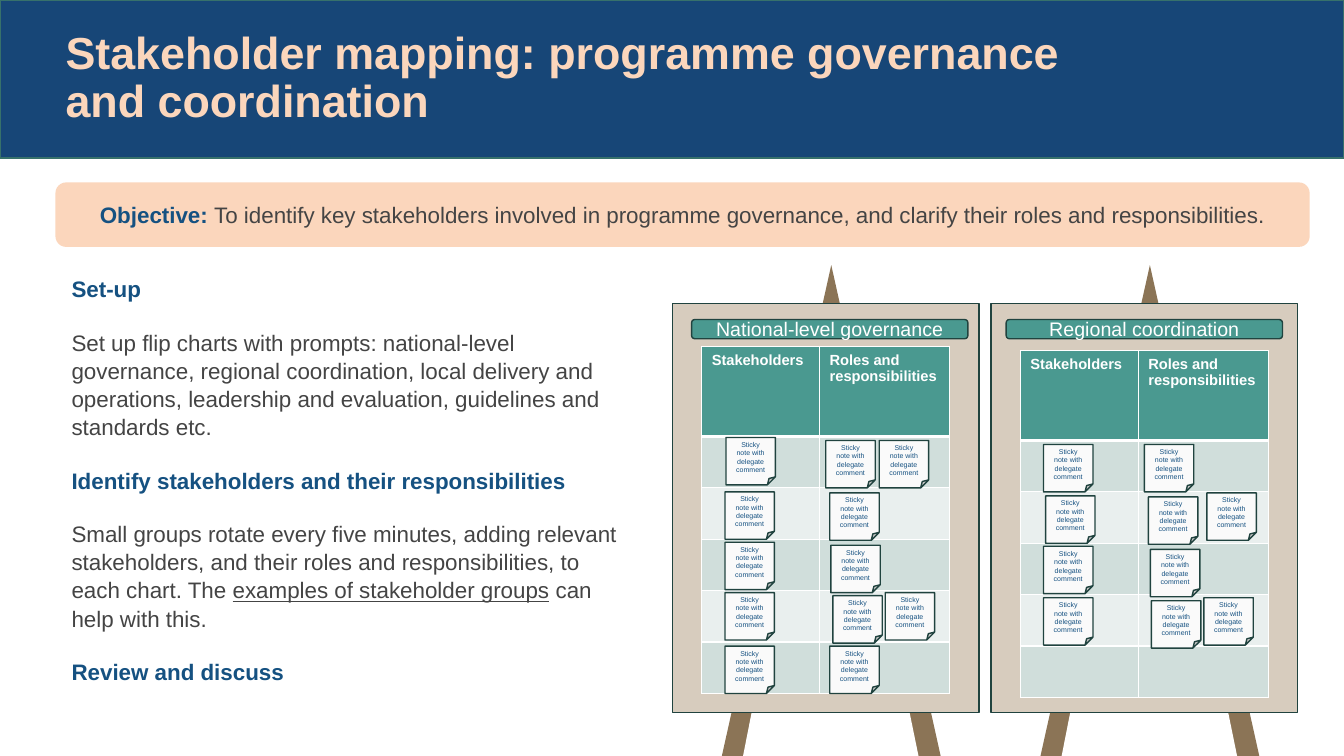
import pptx
import pptx.util
import pptx.dml.color
import pptx.enum.shapes
import pptx.enum.text
import pptx.oxml
import pptx.oxml.ns

# Content
TITLE = "Stakeholder mapping: programme governance and coordination"
OBJECTIVE = [("Objective: ", "heading"),
             ("To identify key stakeholders involved in programme governance, "
              "and clarify their roles and responsibilities.", "body")]
STEPS = [
    [("Set-up", "heading")],
    [("Set up flip charts with prompts: national-level governance, regional "
      "coordination, local delivery and operations, leadership and evaluation, "
      "guidelines and standards etc.", "body")],
    [("Identify stakeholders and their responsibilities", "heading")],
    [("Small groups rotate every five minutes, adding relevant stakeholders, and "
      "their roles and responsibilities, to each chart. The ", "body"),
     ("examples of stakeholder groups", "underlined"),
     (" can help with this.", "body")],
    [("Review and discuss", "heading")],
]
HEADERS = ["Stakeholders", "Roles and responsibilities"]
NOTE = "Sticky note with delegate comment"
FLIP_CHARTS = [
    {"name": "National-level governance", "left": 667, "label": 686, "table_top": 344,
     "notes": [(720, 434), (819, 437), (823, 489), (719, 488), (872, 437),
               (719, 538), (719, 588), (719, 641), (823, 641), (824, 541),
               (878, 588), (826, 591)]},
    {"name": "Regional coordination", "left": 983, "label": 998, "table_top": 348,
     "notes": [(1035, 441), (1135, 441), (1139, 493), (1035, 542), (1035, 593),
               (1141, 545), (1194, 593), (1142, 596), (1037, 492), (1197, 489)]},
]
COLUMNS = [117, 129]
ROWS = [89] + [51] * 5

# Formats
NAVY, PEACH, TEAL, WHITE, DARK = "174677", "FBD6BC", "4A9990", "FFFFFF", "20433F"
BANDS = ["D0DEDB", "E9EFEE"]
FORMATS = {
    "title": {"size": 32, "bold": True, "color": PEACH},
    "heading": {"size": 16, "bold": True, "color": "155181"},
    "body": {"size": 16, "bold": False, "color": "444444"},
    "underlined": {"size": 16, "bold": False, "underline": True, "color": "444444"},
    "label": {"size": 14, "bold": False, "color": WHITE},
    "header": {"size": 10.5, "bold": True, "color": WHITE},
    "note": {"size": 5, "bold": False, "color": "155181"},
}
PX = 9144  # 100 px to the inch
SHAPE = pptx.enum.shapes.MSO_SHAPE
ALIGN = pptx.enum.text.PP_ALIGN
MIDDLE = pptx.enum.text.MSO_ANCHOR.MIDDLE


def px(*lengths):
    return [pptx.util.Emu(n * PX) for n in lengths]


def rgb(value):
    return pptx.dml.color.RGBColor.from_string(value)


def write(tf, paragraphs, align=ALIGN.LEFT, **spacing):
    """Fill a text frame with paragraphs of (text, format name) runs."""
    tf.word_wrap = True
    for i, runs in enumerate(paragraphs):
        p = tf.add_paragraph() if i else tf.paragraphs[0]
        p.alignment = align
        for key, value in spacing.items():
            setattr(p, key, value)
        if i == 0:
            p.space_before = pptx.util.Pt(0)
        for text, name in runs:
            r = p.add_run()
            r.text = text
            r.font.name = "Arial"
            for key, value in FORMATS[name].items():
                if key == "color":
                    r.font.color.rgb = rgb(value)
                else:
                    setattr(r.font, key, pptx.util.Pt(value) if key == "size" else value)


def set_insets(tf, side, top=0):
    for name, inset in zip(("left", "right", "top", "bottom"), (side, side, top, top)):
        setattr(tf, f"margin_{name}", px(inset)[0])


def add_shape(shapes, kind, box, fill, line=None, runs=None, side=10):
    sp = shapes.add_shape(kind, *px(*box))
    sp.shadow.inherit = False
    sp.fill.solid()
    sp.fill.fore_color.rgb = rgb(fill)
    if line:
        sp.line.color.rgb = rgb(line)
        sp.line.width = pptx.util.Pt(1)
    else:
        sp.line.fill.background()
    if runs:
        set_insets(sp.text_frame, side)
        sp.text_frame.vertical_anchor = MIDDLE
        write(sp.text_frame, [runs], ALIGN.CENTER)
    return sp


def set_borders(cell, widths):
    """White cell borders; widths in points for left, right, top, bottom."""
    tc_pr = cell._tc.get_or_add_tcPr()
    for i, (side, width) in enumerate(zip("LRTB", widths)):
        tc_pr.insert(i, pptx.oxml.parse_xml(
            f'<a:ln{side} {pptx.oxml.ns.nsdecls("a")} w="{width * 12700}"><a:solidFill>'
            f'<a:srgbClr val="{WHITE}"/></a:solidFill></a:ln{side}>'))


def add_roles_table(shapes, left, top):
    frame = shapes.add_table(len(ROWS), len(COLUMNS),
                             *px(left, top, sum(COLUMNS), sum(ROWS)))
    table = frame.table
    for column, width in zip(table.columns, COLUMNS):
        column.width = px(width)[0]
    for i, (row, height) in enumerate(zip(table.rows, ROWS)):
        row.height = px(height)[0]
        for cell, header in zip(row.cells, HEADERS):
            cell.fill.solid()
            cell.fill.fore_color.rgb = rgb(BANDS[(i - 1) % 2] if i else TEAL)
            set_borders(cell, (1, 1, 3 if i == 1 else 1, 1 if i else 3))
            if i == 0:
                write(cell.text_frame, [[(header, "header")]])


def add_flip_chart(shapes, name, left, label, table_top, notes):
    # Easel: legs, gap between them, board
    easel = shapes.add_group_shape().shapes
    add_shape(easel, SHAPE.ISOSCELES_TRIANGLE, (left + 49, 263, 217, 487), "8B7456")
    gap = add_shape(easel, SHAPE.ISOSCELES_TRIANGLE, (left + 70, 317, 174, 433), WHITE)
    gap.adjustments[0] = 0.49
    add_shape(easel, SHAPE.RECTANGLE, (left, 301, 304, 406), "D7CCBE", DARK)
    # Label, table and sticky notes
    add_shape(shapes, SHAPE.ROUNDED_RECTANGLE, (label, 317, 274, 19), TEAL, DARK,
              [(name, "label")], 0)
    add_roles_table(shapes, left + 29, table_top)
    for x, y in notes:
        add_shape(shapes, SHAPE.FOLDED_CORNER, (x, y, 49, 47), "FAFAFA", DARK,
                  [(NOTE, "note")], 9)


def place(sp, box):
    sp.left, sp.top, sp.width, sp.height = px(*box)
    sp.text_frame.auto_size = pptx.enum.text.MSO_AUTO_SIZE.NONE
    set_insets(sp.text_frame, 10, 5)


def main():
    prs = pptx.Presentation()
    prs.slide_width, prs.slide_height = pptx.util.Inches(13.33), pptx.util.Inches(7.5)
    slide = prs.slides.add_slide(prs.slide_layouts[1])
    shapes = slide.shapes

    # Title on its band
    band = add_shape(shapes, SHAPE.RECTANGLE, (0, 0, 1333, 157), NAVY, "37716B")
    shapes._spTree.insert(2, band._element)
    place(shapes.title, (55, 0, 1016, 157))
    shapes.title.text_frame.vertical_anchor = MIDDLE
    write(shapes.title.text_frame, [[(TITLE, "title")]], line_spacing=0.9)

    # Steps
    body = slide.placeholders[1]
    place(body, (55, 267, 569, 439))
    tf = body.text_frame
    write(tf, STEPS, line_spacing=1.05, space_before=pptx.util.Pt(12),
          space_after=pptx.util.Pt(6))
    for p in tf.paragraphs:
        p_pr = p._p.get_or_add_pPr()
        p_pr.set("marL", str(6 * PX))
        p_pr.set("indent", "0")
        p_pr.append(pptx.oxml.parse_xml(f'<a:buNone {pptx.oxml.ns.nsdecls("a")}/>'))

    # Objective and flip charts
    add_shape(shapes, SHAPE.ROUNDED_RECTANGLE, (55, 181, 1244, 64), PEACH, runs=OBJECTIVE)
    for chart in FLIP_CHARTS:
        add_flip_chart(shapes, **chart)

    prs.save("out.pptx")


if __name__ == "__main__":
    main()
